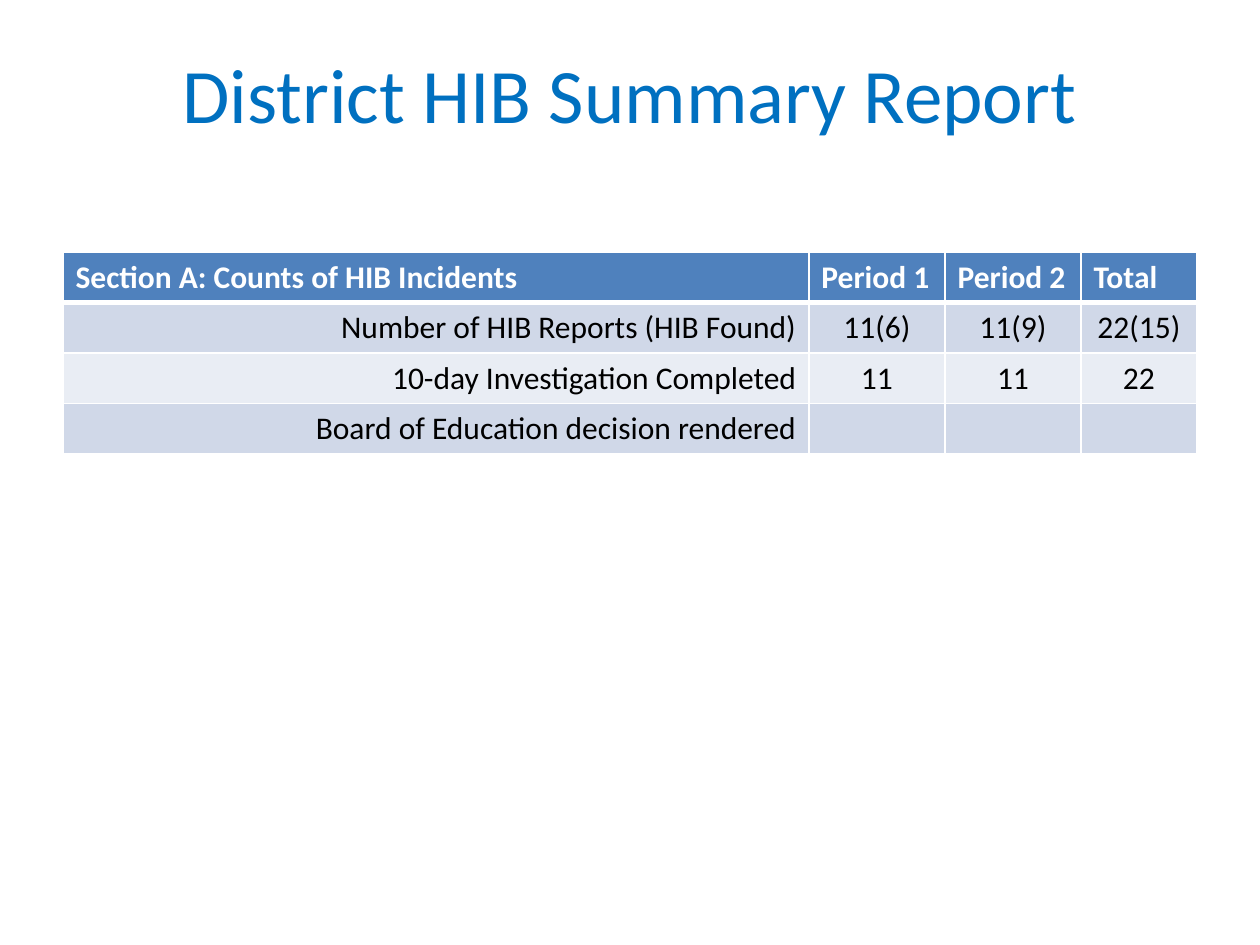
from lxml.etree import SubElement
from pptx import Presentation
from pptx.dml.color import RGBColor
from pptx.enum.text import MSO_ANCHOR, PP_ALIGN
from pptx.oxml.ns import qn
from pptx.util import Inches, Pt

# Content
TITLE = "District HIB Summary Report"
ROWS = [
    ("Section A: Counts of HIB Incidents", "Period 1", "Period 2", "Total"),
    ("Number of HIB Reports (HIB Found)", "11(6)", "11(9)", "22(15)"),
    ("10-day Investigation Completed", "11", "11", "22"),
    ("Board of Education decision rendered", "", "", ""),
]

# Layout and look
WIDTH, HEIGHT = 10, 7.5
MARGIN = WIDTH * 0.05
TABLE_TOP = 2
COLUMN_WIDTHS = [5.92, 1.08, 1.08, 0.92]
ROW_HEIGHT = 0.4
COLORS = {
    "title": "0070C0",
    "header": "4F81BD",
    "band": "D0D8E8",
    "light band": "E9EDF4",
    "white": "FFFFFF",
    "black": "000000",
}


def color(name):
    return RGBColor.from_string(COLORS[name])


def write(frame, text, align, ink, **formats):
    para = frame.paragraphs[0]
    para.alignment = align
    target = para.font
    if text:
        span = para.add_run()
        span.text = text
        target = span.font
    for name, value in {"name": "Calibri", **formats}.items():
        setattr(target, name, value)
    target.color.rgb = color(ink)


def add_borders(cell, points):
    properties = cell._tc.get_or_add_tcPr()
    for side, width in points.items():
        line = SubElement(properties, qn(f"a:ln{side}"), w=str(Pt(width)))
        fill = SubElement(line, qn("a:solidFill"))
        SubElement(fill, qn("a:srgbClr"), val=COLORS["white"])


deck = Presentation()
deck.slide_width, deck.slide_height = Inches(WIDTH), Inches(HEIGHT)
page = deck.slides.add_slide(deck.slide_layouts[6])

# Title
box = page.shapes.add_textbox(
    Inches(MARGIN), Inches(0.25), Inches(WIDTH - 2 * MARGIN), Inches(0.97)
)
box.text_frame.word_wrap = True
box.text_frame.vertical_anchor = MSO_ANCHOR.MIDDLE
write(box.text_frame, TITLE, PP_ALIGN.CENTER, "title", size=Pt(44))

# Table of counts
table = page.shapes.add_table(
    len(ROWS), len(COLUMN_WIDTHS), Inches(MARGIN), Inches(TABLE_TOP),
    Inches(sum(COLUMN_WIDTHS)), Inches(ROW_HEIGHT * len(ROWS)),
).table
for column, width in zip(table.columns, COLUMN_WIDTHS):
    column.width = Inches(width)

for r, texts in enumerate(ROWS):
    header = r == 0
    table.rows[r].height = Inches(ROW_HEIGHT)
    shade = "header" if header else ("light band", "band")[r % 2]
    for c, text in enumerate(texts):
        cell = table.cell(r, c)
        add_borders(cell, {"L": 1, "R": 1, "T": 3 if r == 1 else 1, "B": 3 if header else 1})
        cell.fill.solid()
        cell.fill.fore_color.rgb = color(shade)
        if header:
            align = PP_ALIGN.LEFT
        else:
            align = PP_ALIGN.CENTER if c else PP_ALIGN.RIGHT
        write(cell.text_frame, text, align, "white" if header else "black",
              size=Pt(18), bold=header)

deck.save("out.pptx")
